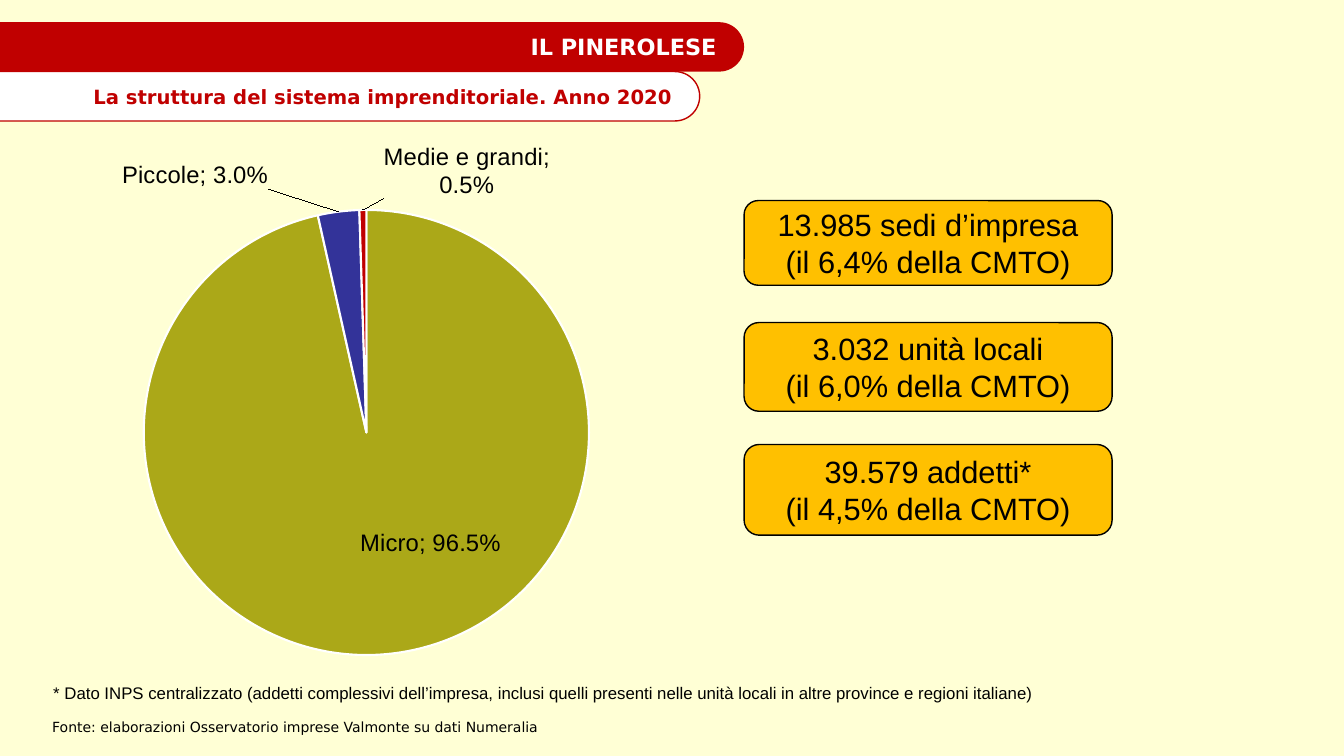
from dataclasses import dataclass

from lxml.etree import Element, SubElement
from pptx import Presentation
from pptx.chart.chart import Chart
from pptx.chart.data import CategoryChartData
from pptx.dml.color import RGBColor
from pptx.enum.chart import XL_CHART_TYPE, XL_LABEL_POSITION
from pptx.enum.shapes import MSO_SHAPE
from pptx.enum.text import MSO_ANCHOR, MSO_AUTO_SIZE, PP_ALIGN
from pptx.oxml.ns import qn
from pptx.slide import Slide
from pptx.text.text import Font
from pptx.util import Emu, Pt

CREAM = RGBColor(0xFF, 0xFF, 0xD5)
RED = RGBColor(0xC0, 0x00, 0x00)
WHITE = RGBColor(0xFF, 0xFF, 0xFF)
BLACK = RGBColor(0x00, 0x00, 0x00)
AMBER = RGBColor(0xFF, 0xC0, 0x00)
OLIVE = RGBColor(0xAB, 0xA8, 0x18)
BLUE = RGBColor(0x33, 0x33, 0x99)

EMU_PER_PX = 9144
SANS = "Arial"
HEADING = "DejaVu Sans"


def px(length: int) -> Emu:
    return Emu(length * EMU_PER_PX)


@dataclass(frozen=True)
class Box:
    left: int
    top: int
    width: int
    height: int

    def emu(self) -> tuple[Emu, Emu, Emu, Emu]:
        return px(self.left), px(self.top), px(self.width), px(self.height)


@dataclass(frozen=True)
class Banner:
    box: Box
    text: str
    size: int
    fill: RGBColor
    color: RGBColor
    outline: RGBColor | None = None


@dataclass(frozen=True)
class Figure:
    top: int
    height: int
    lines: tuple[str, str]


@dataclass(frozen=True)
class Note:
    box: Box
    text: str
    size: int
    font: str
    wrap: bool


@dataclass(frozen=True)
class Slice:
    name: str
    share: float
    color: RGBColor
    position: XL_LABEL_POSITION
    shift_x: float
    shift_y: float


BANNERS = (
    Banner(Box(-73, 22, 811, 49), "IL PINEROLESE", 16, RED, WHITE),
    Banner(Box(-30, 71, 724, 49), "La struttura del sistema imprenditoriale. Anno 2020",
           14, WHITE, RED, RED),
)
FIGURES = (
    Figure(199, 84, ("13.985 sedi d’impresa", "(il 6,4% della CMTO)")),
    Figure(320, 88, ("3.032 unità locali", "(il 6,0% della CMTO)")),
    Figure(441, 90, ("39.579 addetti*", "(il 4,5% della CMTO)")),
)
NOTES = (
    Note(Box(43, 672, 1117, 30),
         "* Dato INPS centralizzato (addetti complessivi dell’impresa, inclusi quelli "
         "presenti nelle unità locali in altre province e regioni italiane)",
         12, SANS, True),
    Note(Box(42, 708, 523, 27),
         "Fonte: elaborazioni Osservatorio imprese Valmonte su dati Numeralia",
         10, HEADING, False),
)
SLICES = (
    Slice("Micro", 0.965, OLIVE, XL_LABEL_POSITION.CENTER, 0.06, 0),
    Slice("Piccole", 0.03, BLUE, XL_LABEL_POSITION.OUTSIDE_END, -0.08, -0.03),
    Slice("Medie e grandi", 0.005, RED, XL_LABEL_POSITION.OUTSIDE_END, 0.12, -0.01),
)
PIE_BOX = Box(-58, 120, 860, 552)
PLOT_LAYOUT = {"layoutTarget": "inner", "xMode": "edge", "yMode": "edge",
               "x": 0.23, "y": 0.16, "w": 0.52, "h": 0.8}


def style_font(font: Font, name: str, size: int, color: RGBColor, bold: bool = False) -> None:
    font.name = name
    font.size = Pt(size)
    font.bold = bold
    font.color.rgb = color


def add_round_box(slide: Slide, box: Box, fill: RGBColor, outline: RGBColor | None):
    shape = slide.shapes.add_shape(MSO_SHAPE.ROUNDED_RECTANGLE, *box.emu())
    shape.shadow.inherit = False
    shape.fill.solid()
    shape.fill.fore_color.rgb = fill
    if outline is None:
        shape.line.fill.background()
    else:
        shape.line.color.rgb = outline
        shape.line.width = Pt(1)
    shape.text_frame.word_wrap = True
    shape.text_frame.vertical_anchor = MSO_ANCHOR.MIDDLE
    return shape


def add_banner(slide: Slide, banner: Banner) -> None:
    shape = add_round_box(slide, banner.box, banner.fill, banner.outline)
    shape.adjustments[0] = 0.5
    frame = shape.text_frame
    frame.margin_left = frame.margin_top = frame.margin_bottom = 0
    frame.margin_right = px(20)
    paragraph = frame.paragraphs[0]
    paragraph.text = banner.text
    paragraph.alignment = PP_ALIGN.RIGHT
    style_font(paragraph.font, HEADING, banner.size, banner.color, True)


def add_figure(slide: Slide, figure: Figure) -> None:
    shape = add_round_box(slide, Box(738, figure.top, 365, figure.height), AMBER, BLACK)
    shape.text_frame.text = "\n".join(figure.lines)
    for paragraph in shape.text_frame.paragraphs:
        paragraph.alignment = PP_ALIGN.CENTER
        style_font(paragraph.font, SANS, 22, BLACK)


def add_note(slide: Slide, note: Note) -> None:
    frame = slide.shapes.add_textbox(*note.box.emu()).text_frame
    frame.word_wrap = note.wrap
    frame.auto_size = MSO_AUTO_SIZE.SHAPE_TO_FIT_TEXT
    paragraph = frame.paragraphs[0]
    paragraph.text = note.text
    style_font(paragraph.font, note.font, note.size, BLACK)


def manual_layout(values: dict[str, str | float]):
    layout = Element(qn("c:layout"))
    manual = SubElement(layout, qn("c:manualLayout"))
    for name, value in values.items():
        SubElement(manual, qn(f"c:{name}")).set("val", str(value))
    return layout


def place_plot_and_labels(chart: Chart) -> None:
    plot_area = chart.element.find(".//" + qn("c:plotArea"))
    for layout in plot_area.findall(qn("c:layout")):
        plot_area.remove(layout)
    plot_area.insert(0, manual_layout(PLOT_LAYOUT))
    for label, part in zip(chart.element.iter(qn("c:dLbl")), SLICES):
        label.find(qn("c:idx")).addnext(manual_layout({"x": part.shift_x, "y": part.shift_y}))
        label.find(qn("c:showCatName")).set("val", "1")
    for bubble_flag in list(chart.element.iter(qn("c:showBubbleSize"))):
        separator = Element(qn("c:separator"))
        separator.text = "; "
        bubble_flag.addnext(separator)


def add_pie(slide: Slide) -> None:
    data = CategoryChartData(number_format="0.0%")
    data.categories = [part.name for part in SLICES]
    data.add_series("Series 1", [part.share for part in SLICES])
    chart = slide.shapes.add_chart(XL_CHART_TYPE.PIE, *PIE_BOX.emu(), data).chart
    chart.has_title = False
    chart.has_legend = False
    style_font(chart.font, SANS, 10, BLACK)
    plot = chart.plots[0]
    plot.vary_by_categories = True
    series = plot.series[0]
    labels = series.data_labels
    labels.show_value = True
    labels.show_category_name = True
    labels.number_format = "0.0%"
    labels.number_format_is_linked = False
    style_font(labels.font, SANS, 17, BLACK)
    for index, part in enumerate(SLICES):
        point = series.points[index]
        point.format.fill.solid()
        point.format.fill.fore_color.rgb = part.color
        point.format.line.color.rgb = WHITE
        point.format.line.width = Pt(1.5)
        style_font(point.data_label.font, SANS, 17, BLACK)
        point.data_label.position = part.position
    place_plot_and_labels(chart)


def main() -> None:
    presentation = Presentation()
    presentation.slide_width = px(1333)
    presentation.slide_height = px(750)
    slide = presentation.slides.add_slide(presentation.slide_layouts[6])
    slide.background.fill.solid()
    slide.background.fill.fore_color.rgb = CREAM
    for banner in BANNERS:
        add_banner(slide, banner)
    add_pie(slide)
    for figure in FIGURES:
        add_figure(slide, figure)
    for note in NOTES:
        add_note(slide, note)
    presentation.save("out.pptx")


if __name__ == "__main__":
    main()
